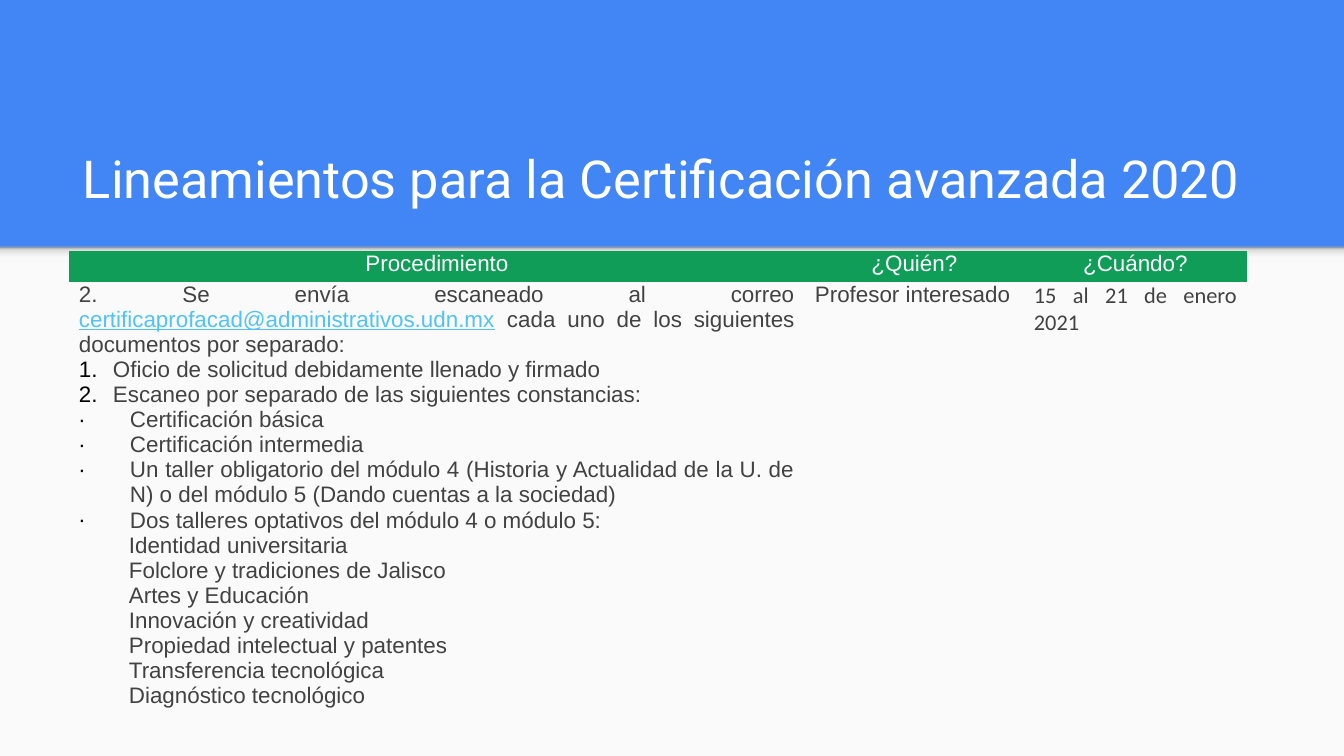
from dataclasses import dataclass
from typing import Optional

import lxml.etree
import pptx
import pptx.dml.color
import pptx.enum.shapes
import pptx.enum.text
import pptx.oxml.ns
import pptx.util

EMU_PER_PX = 914400 / 134.4
NO_GRID_STYLE = "{2D5ABB26-0587-4C30-8999-92F81FD0307C}"
ALIGN = pptx.enum.text.PP_ALIGN
qn = pptx.oxml.ns.qn


@dataclass(frozen=True)
class Theme:
    blue: str = "4285F4"
    paper: str = "FAFAFA"
    green: str = "0F9D58"
    white: str = "FFFFFF"
    body: str = "424242"
    link: str = "4FC3F7"
    bullet: str = "000000"
    shadow: tuple = ((0, "F9F9F9"), (36, "F9F9F9"), (80, "DEDEDE"), (100, "999999"))
    title_font: str = "Roboto"
    font: str = "Arial"
    date_font: str = "Calibri"
    title_pt: int = 28
    body_pt: int = 12


T = Theme()


@dataclass(frozen=True)
class Run:
    text: str
    color: str = T.body
    font: str = T.font
    size: int = T.body_pt
    underline: bool = False


@dataclass(frozen=True)
class Para:
    runs: tuple[Run, ...]
    align: ALIGN = ALIGN.JUSTIFY
    indent: int = 0
    bullet: Optional[str] = None


@dataclass(frozen=True)
class Box:
    x: int
    y: int
    w: int
    h: int


def px(n: int) -> pptx.util.Emu:
    return pptx.util.Emu(round(n * EMU_PER_PX))


def rgb(color: str) -> pptx.dml.color.RGBColor:
    return pptx.dml.color.RGBColor.from_string(color)


def place(box: Box) -> tuple:
    return px(box.x), px(box.y), px(box.w), px(box.h)


def add_bullet(pPr, kind: str) -> None:
    clr = lxml.etree.SubElement(pPr, qn("a:buClr"))
    lxml.etree.SubElement(clr, qn("a:srgbClr"), val=T.bullet)
    lxml.etree.SubElement(pPr, qn("a:buFont"), typeface=T.font)
    if kind == "number":
        lxml.etree.SubElement(pPr, qn("a:buAutoNum"), type="arabicPeriod")
    else:
        lxml.etree.SubElement(pPr, qn("a:buChar"), char=kind)


def write(tf, paras: list[Para]) -> None:
    for i, para in enumerate(paras):
        p = tf.add_paragraph() if i else tf.paragraphs[0]
        p.alignment = para.align
        pPr = p._p.get_or_add_pPr()
        if para.indent:
            pPr.set("marL", str(px(para.indent)))
            pPr.set("indent", str(-px(para.indent) if para.bullet else 0))
        if para.bullet:
            add_bullet(pPr, para.bullet)
        for run in para.runs:
            r = p.add_run()
            r.text = run.text
            r.font.name = run.font
            r.font.size = pptx.util.Pt(run.size)
            r.font.color.rgb = rgb(run.color)
            if run.underline:
                r.font.underline = True


def add_rect(s, box: Box):
    sp = s.shapes.add_shape(pptx.enum.shapes.MSO_SHAPE.RECTANGLE, *place(box))
    sp.shadow.inherit = False
    sp.line.fill.background()
    return sp


def add_panel(s, box: Box) -> None:
    sp = add_rect(s, box)
    sp.fill.solid()
    sp.fill.fore_color.rgb = rgb(T.paper)


def add_shadow_strip(s, box: Box) -> None:
    sp = add_rect(s, box)
    sp.fill.gradient()
    sp.fill.gradient_angle = 90
    stops = sp._element.spPr.find(".//" + qn("a:gsLst"))
    for gs in list(stops):
        stops.remove(gs)
    for pos, color in T.shadow:
        gs = lxml.etree.SubElement(stops, qn("a:gs"), pos=str(pos * 1000))
        lxml.etree.SubElement(gs, qn("a:srgbClr"), val=color)


def add_title(s, box: Box, text: str) -> None:
    tf = s.shapes.add_textbox(*place(box)).text_frame
    tf.word_wrap = True
    tf.vertical_anchor = pptx.enum.text.MSO_ANCHOR.BOTTOM
    tf.margin_left = tf.margin_right = tf.margin_top = tf.margin_bottom = px(13)
    write(tf, [Para((Run(text, T.white, T.title_font, T.title_pt),), ALIGN.LEFT)])


def add_grid(s, x: int, y: int, cols: list[int], rows: list[int],
             cells: list[list[list[Para]]]) -> None:
    box = Box(x, y, sum(cols), sum(rows))
    table = s.shapes.add_table(len(rows), len(cols), *place(box)).table
    table._tbl.tblPr.find(qn("a:tableStyleId")).text = NO_GRID_STYLE
    table.horz_banding = False
    for col, width in zip(table.columns, cols):
        col.width = px(width)
    for i, (row, height) in enumerate(zip(table.rows, rows)):
        row.height = px(height)
        for cell, paras in zip(row.cells, cells[i]):
            cell.margin_left = cell.margin_right = px(10)
            cell.margin_top = cell.margin_bottom = 0
            if i == 0:
                cell.fill.solid()
                cell.fill.fore_color.rgb = rgb(T.green)
            else:
                cell.fill.background()
            write(cell.text_frame, paras)


def items(texts: list[str], indent: int, bullet: Optional[str] = None) -> list[Para]:
    return [Para((Run(t),), indent=indent, bullet=bullet) for t in texts]


HEADER = [[Para((Run(t, T.white),), ALIGN.CENTER)]
          for t in ("Procedimiento", "¿Quién?", "¿Cuándo?")]

PROCEDURE = [
    Para((
        Run("2. Se envía escaneado al correo "),
        Run("certificaprofacad@administrativos.udn.mx", T.link, underline=True),
        Run(" cada uno de los siguientes documentos por separado:"),
    )),
    *items([
        "Oficio de solicitud debidamente llenado y firmado",
        "Escaneo por separado de las siguientes constancias:",
    ], 34, "number"),
    *items([
        "Certificación básica",
        "Certificación intermedia",
        "Un taller obligatorio del módulo 4 (Historia y Actualidad de la U. de N)"
        " o del módulo 5 (Dando cuentas a la sociedad)",
        "Dos talleres optativos del módulo 4 o módulo 5:",
    ], 51, "∙"),
    *items([
        "Identidad universitaria",
        "Folclore y tradiciones de Jalisco",
        "Artes y Educación",
        "Innovación y creatividad",
        "Propiedad intelectual y patentes",
        "Transferencia tecnológica",
        "Diagnóstico tecnológico",
    ], 50),
]
WHO = [Para((Run("Profesor interesado"),))]
WHEN = [Para((Run("15 al 21 de enero 2021", font=T.date_font),))]


def main() -> None:
    prs = pptx.Presentation()
    prs.slide_width, prs.slide_height = px(1344), px(756)
    s = prs.slides.add_slide(prs.slide_layouts[6])
    s.background.fill.solid()
    s.background.fill.fore_color.rgb = rgb(T.blue)
    add_panel(s, Box(0, 247, 1344, 509))
    add_shadow_strip(s, Box(0, 247, 1344, 16))
    add_title(s, Box(70, 109, 1208, 113), "Lineamientos para la Certificación avanzada 2020")
    add_grid(s, 69, 251, [736, 219, 223], [31, 442], [HEADER, [PROCEDURE, WHO, WHEN]])
    prs.save("out.pptx")


if __name__ == "__main__":
    main()
